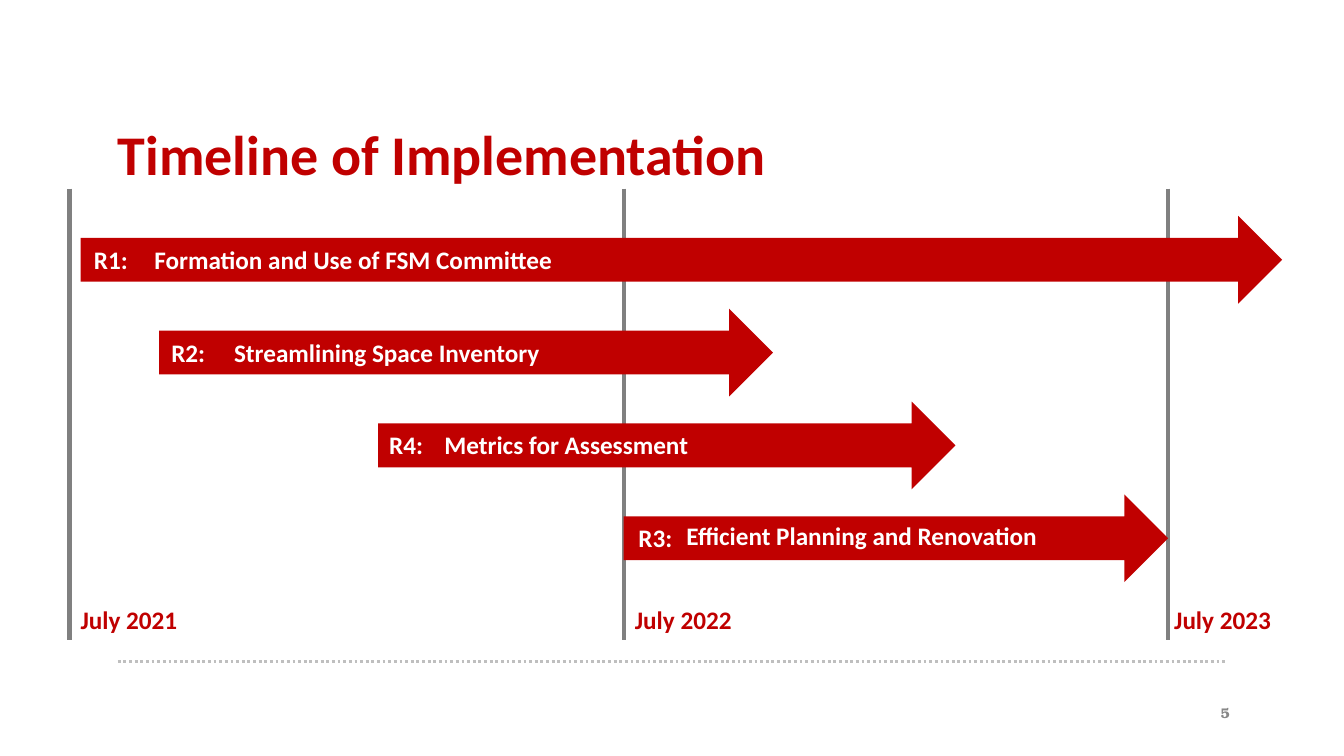
from dataclasses import dataclass

from lxml.etree import SubElement
from pptx import Presentation
from pptx.dml.color import RGBColor
from pptx.enum.dml import MSO_LINE_DASH_STYLE as Dash
from pptx.enum.shapes import MSO_CONNECTOR, MSO_SHAPE
from pptx.enum.text import MSO_ANCHOR as Anchor, PP_ALIGN as Align
from pptx.oxml.ns import qn
from pptx.slide import Slide
from pptx.util import Cm, Pt


@dataclass(frozen=True)
class Theme:
    red: RGBColor = RGBColor(0xC0, 0x00, 0x00)
    white: RGBColor = RGBColor(0xFF, 0xFF, 0xFF)
    milestone_gray: RGBColor = RGBColor(0x80, 0x80, 0x80)
    rule_gray: RGBColor = RGBColor(0xBF, 0xBF, 0xBF)
    number_gray: RGBColor = RGBColor(0x88, 0x88, 0x88)
    body_font: str = "Calibri"
    number_font: str = "TeX Gyre Bonum"
    title_size: float = 40
    body_size: float = 18
    number_size: float = 10


THEME = Theme()


@dataclass(frozen=True)
class Box:
    """Position and size in centimetres."""
    left: float
    top: float
    width: float
    height: float


@dataclass(frozen=True)
class TextStyle:
    color: RGBColor
    size: float = THEME.body_size
    font: str = THEME.body_font
    align: Align = Align.LEFT
    anchor: Anchor = Anchor.TOP
    inset: float = 0.13
    line_spacing: float = 1.0
    wrap: bool = True


@dataclass(frozen=True)
class Milestone:
    date: str
    x: float
    date_left: float


@dataclass(frozen=True)
class Recommendation:
    code: str
    caption: str
    start: float
    length: float
    code_left: float
    caption_left: float
    caption_width: float
    caption_rise: float = 0


TITLE = TextStyle(THEME.red, size=THEME.title_size, anchor=Anchor.BOTTOM,
                  inset=0, line_spacing=0.7)
DATE = TextStyle(THEME.red, align=Align.CENTER)
CODE = TextStyle(THEME.white, align=Align.CENTER)
CAPTION = TextStyle(THEME.white)
PAGE_NUMBER = TextStyle(THEME.number_gray, size=THEME.number_size, font=THEME.number_font,
                        align=Align.RIGHT, anchor=Anchor.MIDDLE, wrap=False)

MILESTONES = (
    Milestone("July 2021", 1.75, 1.88),
    Milestone("July 2022", 15.72, 15.85),
    Milestone("July 2023", 29.44, 29.44),
)
RECOMMENDATIONS = (
    Recommendation("R1:", "Formation and Use of FSM Committee",
                   2.03, 30.28, 2.16, 3.76, 21.18),
    Recommendation("R2:", "Streamlining Space Inventory",
                   4.01, 15.47, 4.11, 5.77, 8.26),
    Recommendation("R4:", "Metrics for Assessment",
                   9.53, 14.55, 9.6, 11.07, 11.94),
    Recommendation("R3:", "Efficient Planning and Renovation",
                   15.72, 13.72, 15.88, 17.17, 9.63, caption_rise=0.05),
)

MILESTONE_TOP, MILESTONE_BOTTOM = 4.75, 16.13
DATE_TOP, DATE_WIDTH = 15.09, 2.74
FIRST_ARROW_TOP, ARROW_PITCH, ARROW_HEIGHT = 5.44, 2.34, 2.21
LABEL_DROP, LABEL_HEIGHT, CODE_WIDTH = 0.58, 0.91, 1.27


def add_text(slide: Slide, text: str, box: Box, style: TextStyle) -> None:
    frame = slide.shapes.add_textbox(
        Cm(box.left), Cm(box.top), Cm(box.width), Cm(box.height)).text_frame
    frame.word_wrap = style.wrap
    frame.vertical_anchor = style.anchor
    frame.margin_left = frame.margin_right = Cm(style.inset)
    frame.margin_top = frame.margin_bottom = Cm(style.inset)
    frame.text = text
    paragraph = frame.paragraphs[0]
    paragraph.alignment = style.align
    paragraph.line_spacing = style.line_spacing
    font = paragraph.runs[0].font
    font.name, font.size, font.bold = style.font, Pt(style.size), True
    font.color.rgb = style.color


def add_line(slide: Slide, x1: float, y1: float, x2: float, y2: float,
             color: RGBColor, width: float, dash: Dash = Dash.SOLID) -> None:
    connector = slide.shapes.add_connector(
        MSO_CONNECTOR.STRAIGHT, Cm(x1), Cm(y1), Cm(x2), Cm(y2))
    connector.line.color.rgb = color
    connector.line.width = Pt(width)
    connector.line.dash_style = dash
    SubElement(connector._element.spPr, qn("a:effectLst"))


def add_milestone(slide: Slide, milestone: Milestone) -> None:
    add_line(slide, milestone.x, MILESTONE_TOP, milestone.x, MILESTONE_BOTTOM,
             THEME.milestone_gray, 3)
    add_text(slide, milestone.date,
             Box(milestone.date_left, DATE_TOP, DATE_WIDTH, LABEL_HEIGHT), DATE)


def add_recommendation(slide: Slide, item: Recommendation, top: float) -> None:
    arrow = slide.shapes.add_shape(MSO_SHAPE.RIGHT_ARROW, Cm(item.start), Cm(top),
                                   Cm(item.length), Cm(ARROW_HEIGHT))
    arrow.shadow.inherit = False
    arrow.fill.solid()
    arrow.fill.fore_color.rgb = THEME.red
    arrow.line.fill.background()
    label_top = top + LABEL_DROP
    add_text(slide, item.code,
             Box(item.code_left, label_top, CODE_WIDTH, LABEL_HEIGHT), CODE)
    add_text(slide, item.caption,
             Box(item.caption_left, label_top - item.caption_rise,
                 item.caption_width, LABEL_HEIGHT), CAPTION)


def main() -> None:
    deck = Presentation()
    deck.slide_width, deck.slide_height = Cm(33.87), Cm(19.05)
    slide = deck.slides.add_slide(deck.slide_layouts[6])

    add_line(slide, 2.97, 16.66, 30.91, 16.66, THEME.rule_gray, 2, Dash.ROUND_DOT)
    add_text(slide, "Timeline of Implementation", Box(2.97, 3.35, 27.94, 1.3), TITLE)
    for milestone in MILESTONES:
        add_milestone(slide, milestone)
    for row, item in enumerate(RECOMMENDATIONS):
        add_recommendation(slide, item, FIRST_ARROW_TOP + row * ARROW_PITCH)
    add_text(slide, "5", Box(30.63, 17.63, 0.48, 0.69), PAGE_NUMBER)

    deck.save("out.pptx")


if __name__ == "__main__":
    main()
